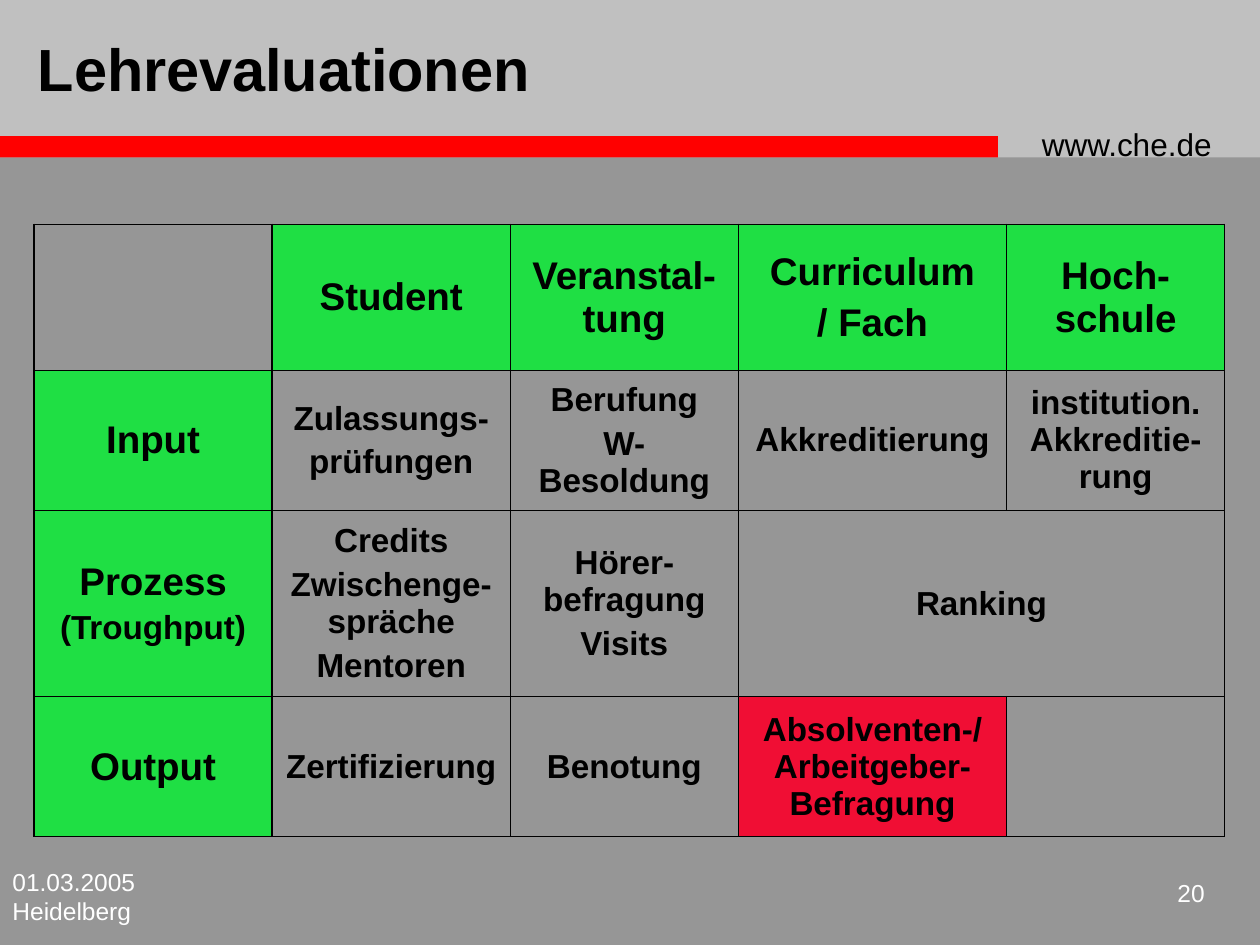
from pptx import Presentation
from pptx.dml.color import RGBColor
from pptx.enum.shapes import MSO_SHAPE as Shape
from pptx.enum.text import MSO_ANCHOR as Anchor, PP_ALIGN as Align
from pptx.oxml import parse_xml
from pptx.oxml.ns import nsdecls
from pptx.util import Inches, Pt

COLORS = {"background": "969696", "band": "C0C0C0", "stripe": "FF0000",
          "text": "000000", "footer": "FFFFFF", "label": "1FDF44",
          "highlight": "F00E34"}

# Content: one list per row, one list of paragraphs per cell
TITLE = "Lehrevaluationen"
ROWS = [
    [[], ["Student"], ["Veranstal-tung"], ["Curriculum", "/ Fach"], ["Hoch-schule"]],
    [["Input"], ["Zulassungs-", "prüfungen"], ["Berufung", "W-Besoldung"],
     ["Akkreditierung"], ["institution. Akkreditie-rung"]],
    [["Prozess", "(Troughput)"], ["Credits", "Zwischenge-spräche", "Mentoren"],
     ["Hörer-befragung", "Visits"], ["Ranking"], []],
    [["Output"], ["Zertifizierung"], ["Benotung"],
     ["Absolventen-/Arbeitgeber-Befragung"], []],
]
COLUMN_WIDTHS = [1.89, 1.89, 1.81, 2.13, 1.73]
ROW_HEIGHTS = [1.16, 1.11, 1.48, 1.11]
RANKING_SPAN = ((2, 3), (2, 4))
HIGHLIGHTED = (3, 3)

BANDS = [((0, 0, 10, 1.25), "band"), ((-0.01, 1.08, 7.93, 0.17), "stripe")]
LABELS = [
    ("www.che.de", (8.17, 0.94, 1.75, 0.4), 18, "text", Align.LEFT),
    ("01.03.2005 Heidelberg", (0, 6.83, 2.08, 0.5), 14, "footer", Align.LEFT),
    ("20", (9.08, 6.92, 0.58, 0.42), 14, "footer", Align.RIGHT),
]


def rgb(name):
    return RGBColor.from_string(COLORS[name])


def write(paragraph, text, size, color="text", bold=False, align=Align.LEFT):
    paragraph.text = text
    paragraph.alignment = align
    formats = {"name": "Arial", "size": Pt(size), "bold": bold}
    for key, value in formats.items():
        setattr(paragraph.font, key, value)
    paragraph.font.color.rgb = rgb(color)


def add_borders(cell):
    properties = cell._tc.get_or_add_tcPr()
    for side in "LRTB":
        properties.append(parse_xml(
            f'<a:ln{side} {nsdecls("a")} w="12700"><a:solidFill>'
            f'<a:srgbClr val="{COLORS["text"]}"/></a:solidFill></a:ln{side}>'))


def fill_cell(cell, position, lines):
    is_label = 0 in position and position != (0, 0)
    add_borders(cell)
    cell.vertical_anchor = Anchor.MIDDLE
    if is_label or position == HIGHLIGHTED:
        cell.fill.solid()
        cell.fill.fore_color.rgb = rgb("label" if is_label else "highlight")
    else:
        cell.fill.background()
    for index, line in enumerate(lines):
        frame = cell.text_frame
        paragraph = frame.add_paragraph() if index else frame.paragraphs[0]
        size = 22 if is_label and not line.startswith("(") else 19
        write(paragraph, line, size, bold=True, align=Align.CENTER)
        if index:
            paragraph.space_before = Pt(round(size * 0.2, 1))


def main():
    deck = Presentation()
    deck.slide_width, deck.slide_height = Inches(10), Inches(7.5)
    slide = deck.slides.add_slide(deck.slide_layouts[5])
    slide.background.fill.solid()
    slide.background.fill.fore_color.rgb = rgb("background")

    # Header band and stripe
    for box, color in BANDS:
        band = slide.shapes.add_shape(Shape.RECTANGLE, *map(Inches, box))
        band.shadow.inherit = False
        band.fill.solid()
        band.fill.fore_color.rgb = rgb(color)
        band.line.fill.background()

    # Web address, date and page number
    for text, box, size, color, align in LABELS:
        label = slide.shapes.add_textbox(*map(Inches, box))
        label.text_frame.word_wrap = True
        write(label.text_frame.paragraphs[0], text, size, color, align=align)

    # Evaluation matrix
    matrix = slide.shapes.add_table(
        len(ROWS), len(COLUMN_WIDTHS), Inches(0.27), Inches(1.78),
        Inches(sum(COLUMN_WIDTHS)), Inches(sum(ROW_HEIGHTS))).table
    matrix.first_row = matrix.horz_banding = False
    for column, width in zip(matrix.columns, COLUMN_WIDTHS):
        column.width = Inches(width)
    for row, height in zip(matrix.rows, ROW_HEIGHTS):
        row.height = Inches(height)
    for r, row in enumerate(ROWS):
        for c, lines in enumerate(row):
            fill_cell(matrix.cell(r, c), (r, c), lines)
    first, last = RANKING_SPAN
    matrix.cell(*first).merge(matrix.cell(*last))

    # Title, raised above the header band
    title = slide.shapes.title
    title.left, title.top, title.width, title.height = map(Inches, (0.2, 0, 7.89, 1.08))
    title.text_frame.vertical_anchor = Anchor.MIDDLE
    write(title.text_frame.paragraphs[0], TITLE, 34, bold=True)
    title.element.getparent().append(title.element)

    deck.save("out.pptx")


if __name__ == "__main__":
    main()
